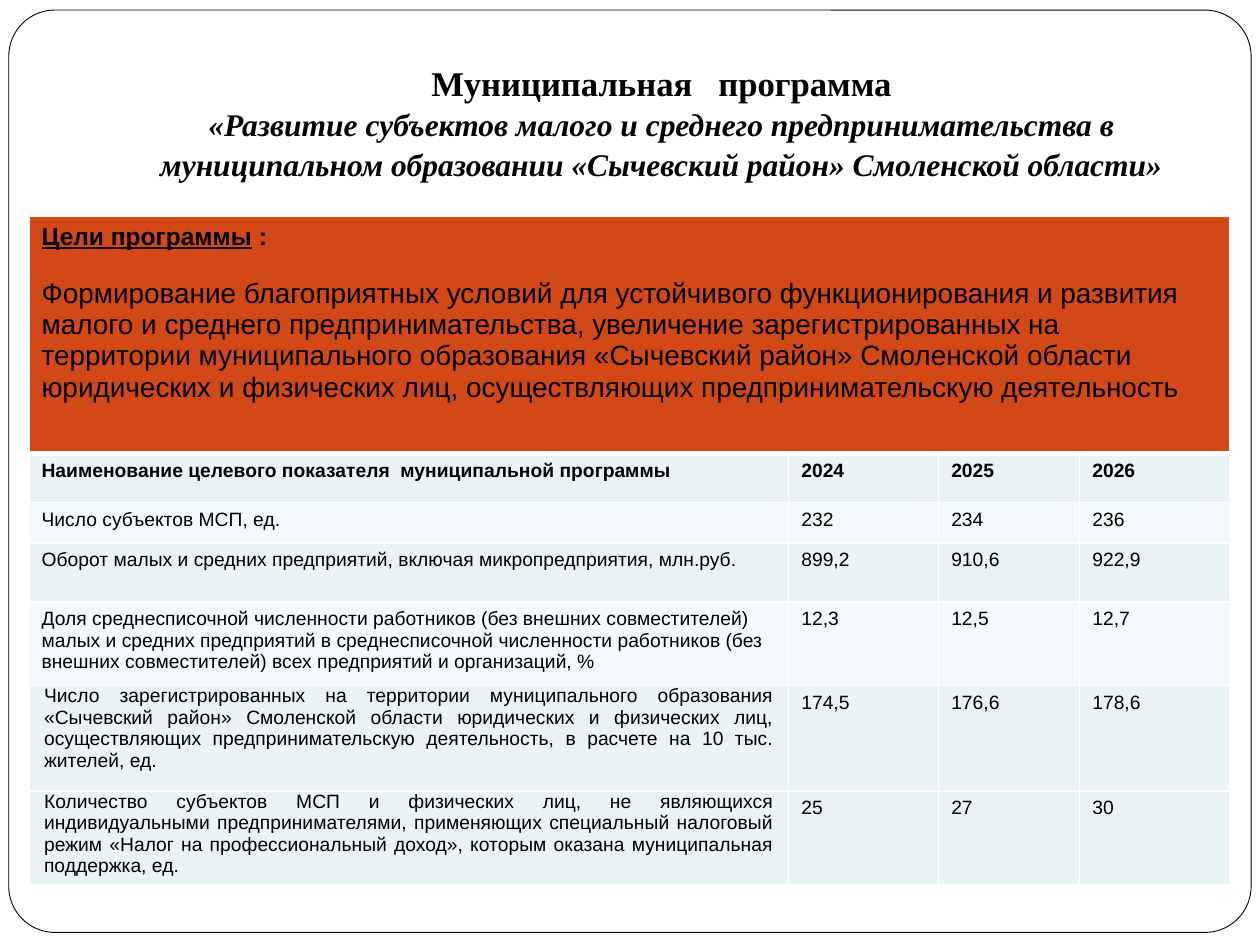
import pptx
import pptx.util
import pptx.dml.color
import pptx.enum.shapes
import pptx.enum.text
import pptx.oxml
import pptx.oxml.ns

Inches = pptx.util.Inches
Pt = pptx.util.Pt
RGBColor = pptx.dml.color.RGBColor
PP_ALIGN = pptx.enum.text.PP_ALIGN

BLACK = RGBColor(0x00, 0x00, 0x00)
WHITE = RGBColor(0xFF, 0xFF, 0xFF)
ORANGE = RGBColor(0xD3, 0x48, 0x17)
BAND_DARK = RGBColor(0xE7, 0xF3, 0xF4)
BAND_LIGHT = RGBColor(0xF3, 0xF9, 0xFA)

COL_WIDTHS = [6.03, 1.19, 1.12, 1.19]
ROW_HEIGHTS = [1.88, 0.39, 0.32, 0.47, 0.66, 0.84, 0.74]
BAND_FILLS = [BAND_DARK, BAND_LIGHT, BAND_DARK, BAND_LIGHT, BAND_DARK, BAND_DARK]
JUSTIFIED_FROM = 5

GOAL = (
    "Формирование благоприятных условий для устойчивого функционирования и развития "
    "малого и среднего предпринимательства, увеличение зарегистрированных на территории "
    "муниципального образования «Сычевский район» Смоленской области юридических и "
    "физических лиц, осуществляющих предпринимательскую деятельность"
)
INDICATORS = [
    ["Наименование целевого показателя  муниципальной программы", "2024", "2025", "2026"],
    ["Число субъектов МСП, ед.", "232", "234", "236"],
    ["Оборот малых и средних предприятий, включая микропредприятия, млн.руб.",
     "899,2", "910,6", "922,9"],
    ["Доля среднесписочной численности работников (без внешних совместителей) малых и "
     "средних предприятий в среднесписочной численности работников (без внешних "
     "совместителей) всех предприятий и организаций, %", "12,3", "12,5", "12,7"],
    ["Число зарегистрированных на территории муниципального образования «Сычевский район» "
     "Смоленской области юридических и физических лиц, осуществляющих предпринимательскую "
     "деятельность, в расчете на 10 тыс. жителей, ед.", "174,5", "176,6", "178,6"],
    ["Количество субъектов МСП и физических лиц, не являющихся индивидуальными "
     "предпринимателями, применяющих специальный налоговый режим «Налог на "
     "профессиональный доход», которым оказана муниципальная поддержка, ед.",
     "25", "27", "30"],
]


def set_font(font, name, size, bold=False, italic=False):
    font.name = name
    font.size = Pt(size)
    font.bold = bold
    font.italic = italic
    font.color.rgb = BLACK


def add_frame(s):
    frame = s.shapes.add_shape(
        pptx.enum.shapes.MSO_SHAPE.ROUNDED_RECTANGLE,
        Inches(0.07), Inches(0.08), Inches(9.86), Inches(7.32))
    frame.adjustments[0] = 0.05
    frame.shadow.inherit = False
    frame.fill.solid()
    frame.fill.fore_color.rgb = WHITE
    frame.line.color.rgb = BLACK
    frame.line.width = Pt(0.5)
    s.shapes.element.insert(2, frame.element)


def add_title(s):
    title = s.shapes.title
    title.left, title.top = Inches(1), Inches(0.3)
    title.width, title.height = Inches(8.5), Inches(1.25)
    tf = title.text_frame
    tf.word_wrap = True
    tf.auto_size = pptx.enum.text.MSO_AUTO_SIZE.NONE
    tf.vertical_anchor = pptx.enum.text.MSO_ANCHOR.BOTTOM
    tf.margin_bottom = Inches(0.1)
    p = tf.paragraphs[0]
    p.alignment = PP_ALIGN.CENTER
    p.line_spacing = 1.05
    r = p.add_run()
    r.text = "Муниципальная   программа"
    set_font(r.font, "Times New Roman", 19.8, bold=True)
    p.add_line_break()
    r = p.add_run()
    r.text = (
        "«Развитие субъектов малого и среднего предпринимательства в "
        "муниципальном образовании «Сычевский район» Смоленской области»")
    set_font(r.font, "Times New Roman", 18, bold=True, italic=True)


def style_cell(cell, fill, top=1, bottom=1):
    tc_pr = cell._tc.get_or_add_tcPr()
    for side, width in (("L", 1), ("R", 1), ("T", top), ("B", bottom)):
        tc_pr.append(pptx.oxml.parse_xml(
            f'<a:ln{side} {pptx.oxml.ns.nsdecls("a")} w="{Pt(width)}"><a:solidFill>'
            f'<a:srgbClr val="{WHITE}"/></a:solidFill></a:ln{side}>'))
    cell.fill.solid()
    cell.fill.fore_color.rgb = fill


def fill_goal(table):
    for cell in table.rows[0].cells:
        style_cell(cell, ORANGE, bottom=3)
    goal = table.cell(0, 0)
    goal.merge(table.cell(0, len(COL_WIDTHS) - 1))
    p = goal.text_frame.paragraphs[0]
    set_font(p.font, "Arial", 14, bold=True)
    for text, underline in (("Цели программы", True), (" :", False)):
        r = p.add_run()
        r.text = text
        r.font.underline = underline
    p = goal.text_frame.add_paragraph()
    p.text = GOAL
    p.space_before = Pt(16)
    set_font(p.font, "Arial", 16)


def fill_indicators(table):
    for row, (texts, fill) in enumerate(zip(INDICATORS, BAND_FILLS), start=1):
        for col, text in enumerate(texts):
            cell = table.cell(row, col)
            style_cell(cell, fill, top=3 if row == 1 else 1)
            p = cell.text_frame.paragraphs[0]
            p.text = text
            set_font(p.font, "Arial", 11, bold=row == 1)
            if col == 0 and row >= JUSTIFIED_FROM:
                p.alignment = PP_ALIGN.JUSTIFY
                cell.margin_left = cell.margin_right = Inches(0.12)
                cell.margin_top = cell.margin_bottom = 0


def add_indicator_table(s):
    table = s.shapes.add_table(
        len(ROW_HEIGHTS), len(COL_WIDTHS), Inches(0.23), Inches(1.72),
        Inches(sum(COL_WIDTHS)), Inches(sum(ROW_HEIGHTS))).table
    for column, width in zip(table.columns, COL_WIDTHS):
        column.width = Inches(width)
    for row, height in zip(table.rows, ROW_HEIGHTS):
        row.height = Inches(height)
    fill_goal(table)
    fill_indicators(table)


def main():
    prs = pptx.Presentation()
    prs.slide_width, prs.slide_height = Inches(10), Inches(7.5)
    s = prs.slides.add_slide(prs.slide_layouts[5])
    add_frame(s)
    add_title(s)
    add_indicator_table(s)
    prs.save("out.pptx")


if __name__ == "__main__":
    main()
